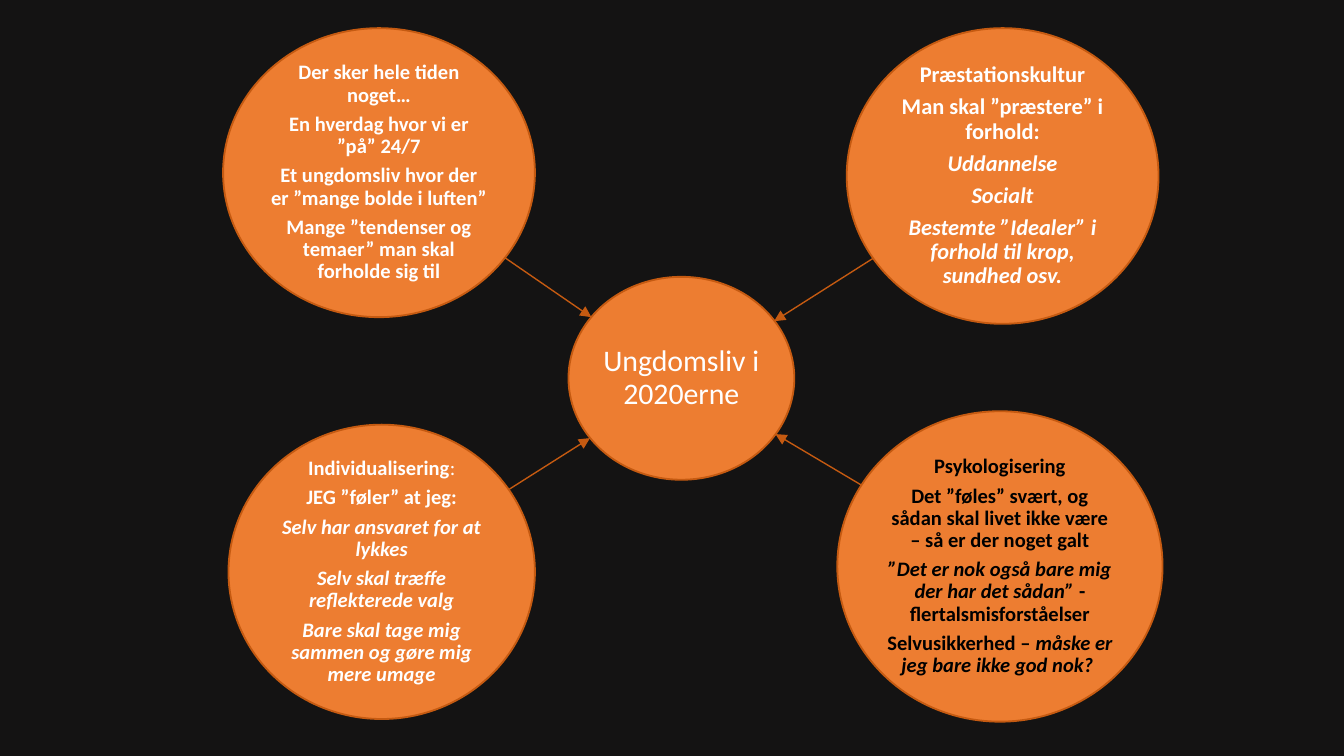
from lxml import etree
from pptx import Presentation
from pptx import util as u
from pptx.dml.color import RGBColor
from pptx.enum import shapes, text
from pptx.oxml.ns import qn

ORANGE, RUST, WHITE, BLACK = "ED7D31", "C55A11", "FFFFFF", "000000"

# Each bubble: position and size, text size, text colour, paragraphs.
# A paragraph is a list of runs: (wording, style), where b is bold and i italic.
CENTRE = ((4.23, 2.06, 1.68, 1.51), 16, WHITE, [[("Ungdomsliv i 2020erne", "")]])

# Each theme: its bubble, then where its arrow starts and ends.
THEMES = [
    (((6.23, 3.06, 2.42, 2.31), 11, BLACK, [
        [("Psykologisering", "b")],
        [("Det ”føles” svært, og sådan skal livet ikke være – så er der noget galt", "b")],
        [("”Det er nok også bare mig der har det sådan” ", "bi"),
         ("- flertalsmisforståelser", "b")],
        [("Selvusikkerhed – ", "b"), ("måske er jeg bare ikke god nok? ", "bi")],
    ]), (6.41, 3.61), (5.77, 3.23)),
    (((6.3, 0.21, 2.32, 2.2), 12, WHITE, [
        [("Præstationskultur", "b")],
        [("Man skal ”præstere” i forhold:", "b")],
        [("Uddannelse", "bi")],
        [("Socialt", "bi")],
        [("Bestemte ”Idealer” i forhold til krop, sundhed osv.", "bi")],
    ]), (6.5, 1.92), (5.76, 2.39)),
    (((1.7, 3.16, 2.28, 2.19), 11, WHITE, [
        [("Individualisering", "b"), (":", "")],
        [("JEG ”føler” at jeg:", "b")],
        [("Selv har ansvaret for at lykkes", "bi")],
        [("Selv skal træffe reflekterede valg", "bi")],
        [("Bare skal tage mig sammen og gøre mig mere umage", "bi")],
    ]), (3.79, 3.64), (4.39, 3.26)),
    (((1.66, 0.21, 2.32, 2.15), 11, WHITE, [
        [("Der sker hele tiden noget…", "b")],
        [("En hverdag hvor vi er ”på” 24/7", "b")],
        [("Et ungdomsliv hvor der er ”mange bolde i luften”", "b")],
        [("Mange ”tendenser og temaer” man skal forholde sig til", "b")],
    ]), (3.76, 1.92), (4.4, 2.36)),
]


def rgb(value):
    return RGBColor.from_string(value)


def set_all(obj, values):
    for name, value in values.items():
        setattr(obj, name, value)


class Canvas:
    font = "Calibri"

    def __init__(self, slide, background):
        self.s = slide
        fill = slide.background.fill
        fill.solid()
        fill.fore_color.rgb = rgb(background)

    def line(self, sp, width):
        sp.line.color.rgb = rgb(RUST)
        sp.line.width = u.Pt(width)

    def bubble(self, box, size, color, paragraphs):
        sp = self.s.shapes.add_shape(shapes.MSO_SHAPE.OVAL, *map(u.Inches, box))
        sp.shadow.inherit = False
        sp.fill.solid()
        sp.fill.fore_color.rgb = rgb(ORANGE)
        self.line(sp, 1)
        tf = sp.text_frame
        set_all(tf, {"word_wrap": True, "vertical_anchor": text.MSO_ANCHOR.MIDDLE})
        set_all(tf, {f"margin_{side}": u.Inches(0.01)
                     for side in ("left", "top", "right", "bottom")})
        for i, runs in enumerate(paragraphs):
            p = tf.add_paragraph() if i else tf.paragraphs[0]
            set_all(p, {"alignment": text.PP_ALIGN.CENTER, "line_spacing": 0.9,
                        "space_after": u.Pt(0.35 * size)})
            for wording, style in runs:
                r = p.add_run()
                r.text = wording
                set_all(r.font, {"name": self.font, "size": u.Pt(size),
                                 "bold": "b" in style, "italic": "i" in style})
                r.font.color.rgb = rgb(color)

    def arrow(self, start, end):
        c = self.s.shapes.add_connector(shapes.MSO_CONNECTOR.STRAIGHT,
                                        *map(u.Inches, start + end))
        self.line(c, 0.75)
        etree.SubElement(c.line._get_or_add_ln(), qn("a:tailEnd"), type="triangle")
        etree.SubElement(c._element.spPr, qn("a:effectLst"))


def main():
    prs = Presentation()
    # Widescreen, 16:9
    set_all(prs, {"slide_width": u.Inches(10), "slide_height": u.Inches(10 * 9 / 16)})
    canvas = Canvas(prs.slides.add_slide(prs.slide_layouts[6]), "141313")
    canvas.bubble(*CENTRE)
    for bubble, start, end in THEMES:
        canvas.arrow(start, end)
        canvas.bubble(*bubble)
    prs.save("out.pptx")


if __name__ == "__main__":
    main()
